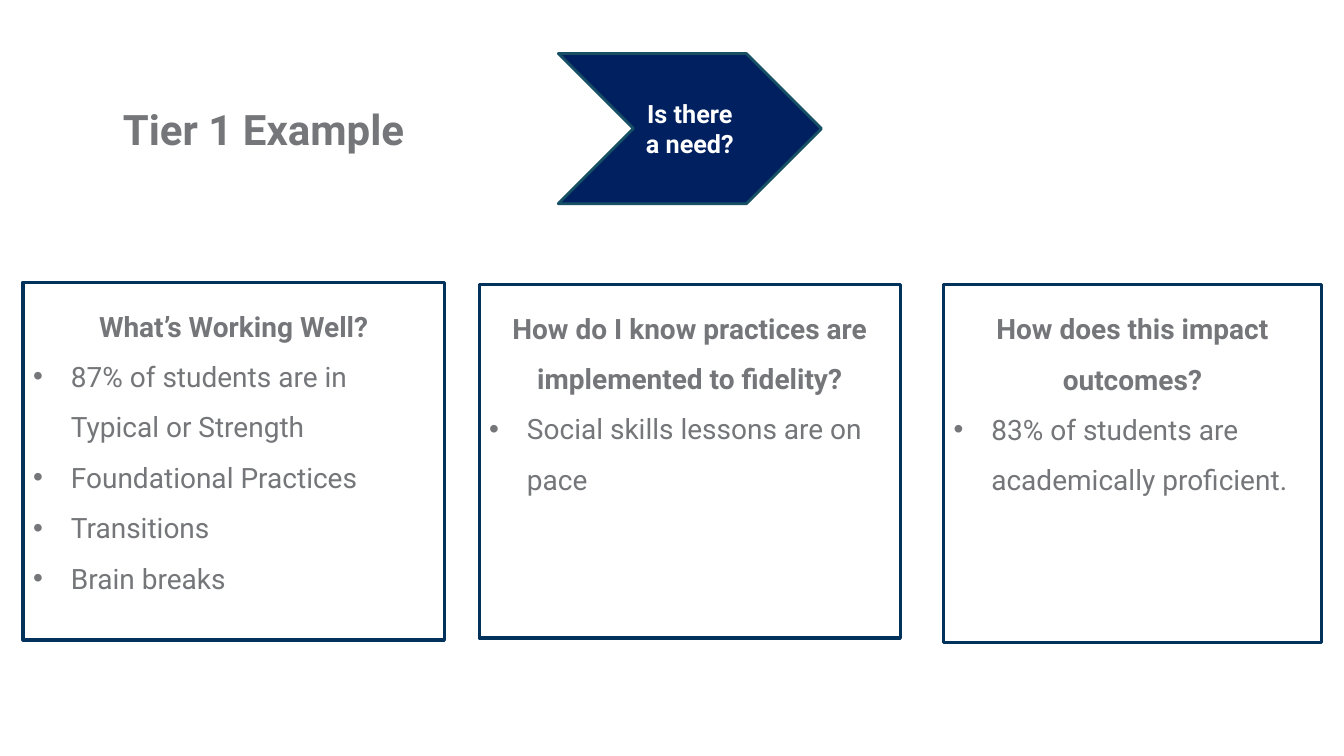
"""Build the Tier 1 example slide with a chevron and three outlined lists."""
from lxml import etree
from pptx import Presentation
from pptx.dml.color import RGBColor
from pptx.enum import shapes, text
from pptx.oxml import ns
from pptx.util import Pt

GREY = RGBColor(0x74, 0x76, 0x79)
NAVY = RGBColor(0x00, 0x20, 0x60)
TEAL = RGBColor(0x17, 0x50, 0x64)
BORDER = RGBColor(0x00, 0x32, 0x5B)
WHITE = RGBColor(0xFF, 0xFF, 0xFF)
FONT = "Roboto"
INDENT = Pt(27)
INSET = Pt(7.2)

TITLE = "Tier 1 Example"
QUESTION = "Is there a need?"
PANELS = [
    (1, (16.4, 201.6, 301, 255.6), "What’s Working Well?",
     ["87% of students are in Typical or Strength", "Foundational Practices",
      "Transitions", "Brain breaks"]),
    (2, (342.2, 203, 301, 252.7), "How do I know practices are implemented to fidelity?",
     ["Social skills lessons are on pace"]),
    (4, (673.9, 203.5, 270, 255.6), "How does this impact outcomes?",
     ["83% of students are academically proficient."]),
]
UNUSED = 3


def place(sp, box):
    """Move a shape to a box given in points."""
    sp.left, sp.top, sp.width, sp.height = (Pt(v) for v in box)


def frame(sp, anchor):
    """Set wrapping, insets and anchor of a shape's text."""
    tf = sp.text_frame
    tf.word_wrap = True
    tf.auto_size = text.MSO_AUTO_SIZE.NONE
    tf.vertical_anchor = anchor
    tf.margin_left = tf.margin_right = tf.margin_top = tf.margin_bottom = INSET
    return tf


def style(p, size, color, bold, align):
    """Format a paragraph and its runs."""
    p.alignment = align
    p.space_before = p.space_after = Pt(0)
    for r in p.runs:
        r.font.name, r.font.size, r.font.bold = FONT, Pt(size), bold
        r.font.color.rgb = color


def set_bullet(p, bulleted):
    """Give a paragraph a hanging bullet, or none."""
    pPr = p._p.get_or_add_pPr()
    pPr.set("marL", str(INDENT if bulleted else 0))
    pPr.set("indent", str(-INDENT if bulleted else 0))
    if not bulleted:
        etree.SubElement(pPr, ns.qn("a:buNone"))
        return
    clr = etree.SubElement(pPr, ns.qn("a:buClr"))
    etree.SubElement(clr, ns.qn("a:srgbClr"), val=str(GREY))
    etree.SubElement(pPr, ns.qn("a:buFont"), typeface="Arial")
    etree.SubElement(pPr, ns.qn("a:buChar"), char="•")


def add_panel(s, idx, box, heading, items):
    """Fill a body placeholder with a heading and bullets."""
    sp = s.placeholders[idx]
    place(sp, box)
    sp.line.color.rgb, sp.line.width = BORDER, Pt(2.25)
    tf = frame(sp, text.MSO_ANCHOR.TOP)
    tf.text = "\n".join([heading, *items])
    for i, p in enumerate(tf.paragraphs):
        set_bullet(p, i > 0)
        p.line_spacing = 1.5
        style(p, 20, GREY, i == 0, text.PP_ALIGN.LEFT if i else text.PP_ALIGN.CENTER)


def main():
    """Build and save the slide."""
    prs = Presentation()
    prs.slide_width, prs.slide_height = Pt(960), Pt(540)
    s = prs.slides.add_slide(prs.slide_layouts[4])

    title = s.shapes.title
    place(title, (80.6, 65.5, 394, 52))
    tf = frame(title, text.MSO_ANCHOR.BOTTOM)
    tf.text = TITLE
    style(tf.paragraphs[0], 30, GREY, True, text.PP_ALIGN.LEFT)

    for panel in PANELS:
        add_panel(s, *panel)
    unused = s.placeholders[UNUSED].element
    unused.getparent().remove(unused)

    chevron = s.shapes.add_shape(shapes.MSO_SHAPE.CHEVRON, 0, 0, 0, 0)
    place(chevron, (398.8, 38.2, 188, 107.3))
    chevron.shadow.inherit = False
    chevron.fill.solid()
    chevron.fill.fore_color.rgb = NAVY
    chevron.line.color.rgb, chevron.line.width = TEAL, Pt(2)
    tf = frame(chevron, text.MSO_ANCHOR.MIDDLE)
    tf.text = QUESTION
    style(tf.paragraphs[0], 18, WHITE, True, text.PP_ALIGN.CENTER)

    prs.save("out.pptx")


if __name__ == "__main__":
    main()
